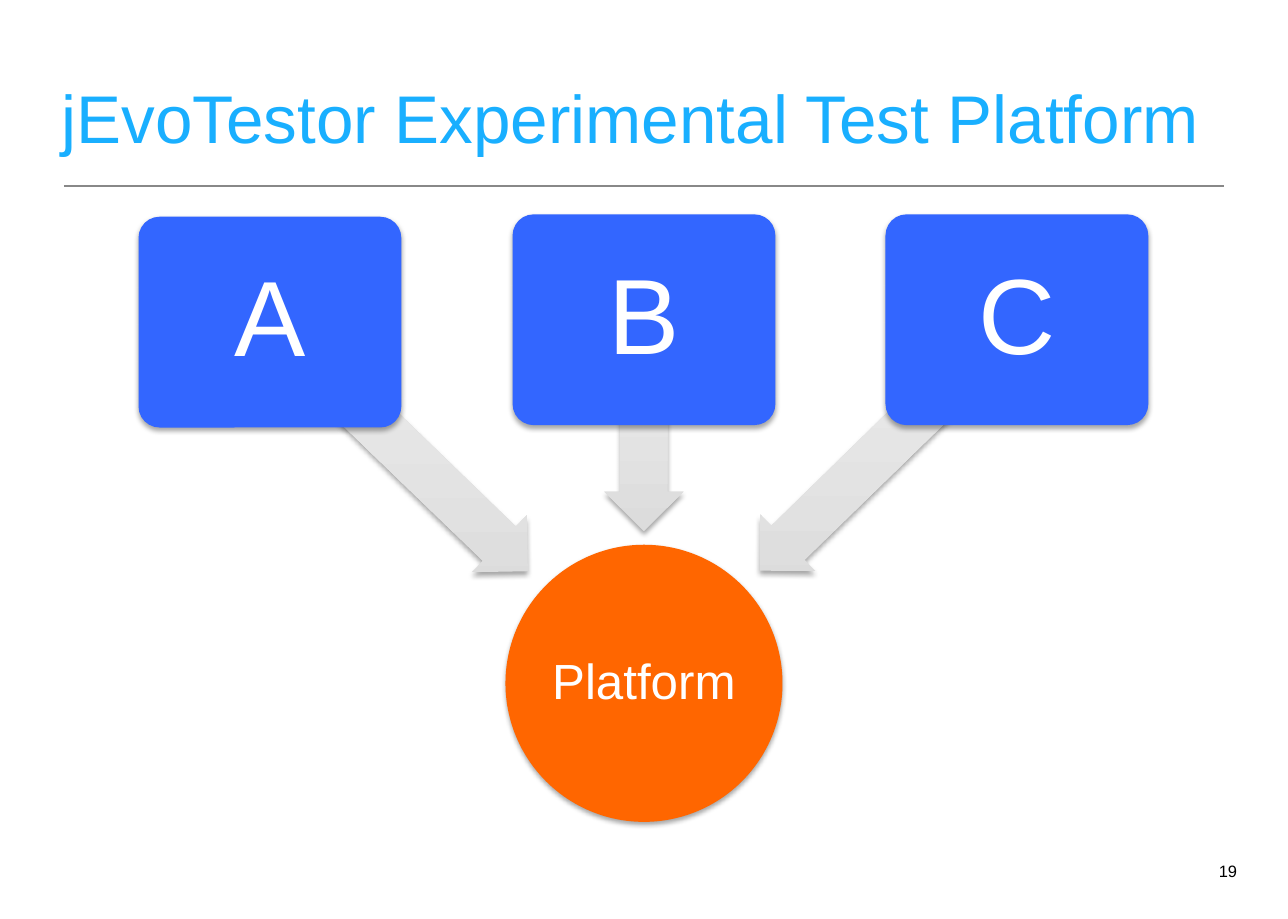
from math import atan2, cos, degrees, hypot, sin

from lxml.etree import SubElement
from pptx import Presentation
from pptx.dml.color import RGBColor
from pptx.enum.shapes import MSO_CONNECTOR, MSO_SHAPE
from pptx.enum.text import MSO_ANCHOR, MSO_AUTO_SIZE, PP_ALIGN
from pptx.oxml.ns import qn
from pptx.util import Inches, Pt

TITLE = "jEvoTestor Experimental Test Platform"
PAGE = "19"
HUB = {"label": "Platform", "centre": (5.44, 5.77), "diameter": 2.34}
SOURCES = [
    {"label": "A", "centre": (2.28, 2.72)},
    {"label": "B", "centre": (5.44, 2.7)},
    {"label": "C", "centre": (8.59, 2.7)},
]
SOURCE_SIZE = (2.22, 1.78)
ARROW_HEIGHT = 0.67
ARROW_REACH = 0.94
ARROW_SHADES = ("DCDCDC", "EEEEEE")

TITLE_FORMAT = {"size": 41, "color": "19AFFF", "align": PP_ALIGN.LEFT,
                "anchor": MSO_ANCHOR.BOTTOM, "margins": (0.04, 0.04)}
HUB_FORMAT = {"size": 30, "color": "FFFFFF", "align": PP_ALIGN.CENTER,
              "anchor": MSO_ANCHOR.MIDDLE, "margins": (0.02, 0.02), "spacing": 0.9}
SOURCE_FORMAT = {**HUB_FORMAT, "size": 65, "margins": (0.14, 0.14)}
PAGE_FORMAT = {"size": 10, "color": "000000", "align": PP_ALIGN.RIGHT,
               "anchor": MSO_ANCHOR.MIDDLE, "margins": (0.07, 0.04)}


def rgb(value):
    return RGBColor.from_string(value)


def apply(target, values):
    for name, value in values.items():
        setattr(target, name, value)


def write(shape, text, style):
    frame = shape.text_frame
    frame.text = text
    across, down = (Inches(margin) for margin in style["margins"])
    apply(frame, {"word_wrap": True, "auto_size": MSO_AUTO_SIZE.NONE,
                  "vertical_anchor": style["anchor"],
                  "margin_left": across, "margin_right": across,
                  "margin_top": down, "margin_bottom": down})
    paragraph = frame.paragraphs[0]
    apply(paragraph, {"alignment": style["align"],
                      "line_spacing": style.get("spacing", 1.0)})
    apply(paragraph.font, {"name": "Arial", "size": Pt(style["size"])})
    paragraph.font.color.rgb = rgb(style["color"])


def add_shadowed(kind, centre, size):
    (x, y), (width, height) = centre, size
    shape = slide.shapes.add_shape(kind, Inches(x - width / 2), Inches(y - height / 2),
                                   Inches(width), Inches(height))
    shape.line.fill.background()
    shape.shadow.inherit = False
    effects = shape._element.spPr.find(qn("a:effectLst"))
    shadow = SubElement(effects, qn("a:outerShdw"), blurRad=str(Pt(3.1)), dist=str(Pt(1.8)),
                        dir="5400000", rotWithShape="0")
    shade = SubElement(shadow, qn("a:srgbClr"), val="000000")
    SubElement(shade, qn("a:alpha"), val="35000")
    return shape


def add_node(kind, centre, size, color, label, style):
    node = add_shadowed(kind, centre, size)
    node.fill.solid()
    node.fill.fore_color.rgb = rgb(color)
    write(node, label, style)
    return node


def add_arrow(start, hub):
    dx, dy = (end - begin for begin, end in zip(start, hub["centre"]))
    length = (hypot(dx, dy) - hub["diameter"] / 2) * ARROW_REACH
    angle = atan2(dy, dx)
    middle = (start[0] + cos(angle) * length / 2, start[1] + sin(angle) * length / 2)
    arrow = add_shadowed(MSO_SHAPE.LEFT_ARROW, middle, (length, ARROW_HEIGHT))
    arrow.rotation = degrees(angle) + 180
    arrow.adjustments[0] = 0.6
    arrow.fill.gradient()
    arrow.fill.gradient_angle = 90
    for stop, color in zip(arrow.fill.gradient_stops, ARROW_SHADES):
        stop.color.rgb = rgb(color)
    arrow._element.spPr.find(qn("a:gradFill")).set("rotWithShape", "0")


presentation = Presentation()
apply(presentation, {"slide_width": Inches(10.88), "slide_height": Inches(7.76)})
slide = presentation.slides.add_slide(presentation.slide_layouts[5])

rule = slide.shapes.add_connector(MSO_CONNECTOR.STRAIGHT, Inches(0.54), Inches(1.57),
                                  Inches(10.34), Inches(1.57))
rule.line.color.rgb = rgb("888888")
rule.line.width = Pt(1)
SubElement(rule._element.spPr, qn("a:effectLst"))

title = slide.shapes.title
apply(title, {"left": Inches(0.48), "top": Inches(0.26),
              "width": Inches(9.92), "height": Inches(1.11)})
write(title, TITLE, TITLE_FORMAT)

add_node(MSO_SHAPE.OVAL, HUB["centre"], (HUB["diameter"], HUB["diameter"]),
         "FF6600", HUB["label"], HUB_FORMAT)
for source in SOURCES:
    add_arrow(source["centre"], HUB)
    box = add_node(MSO_SHAPE.ROUNDED_RECTANGLE, source["centre"], SOURCE_SIZE,
                   "3366FF", source["label"], SOURCE_FORMAT)
    box.adjustments[0] = 0.1

page = slide.shapes.add_textbox(Inches(10.2), Inches(7.15), Inches(0.32), Inches(0.41))
write(page, PAGE, PAGE_FORMAT)

presentation.save("out.pptx")
